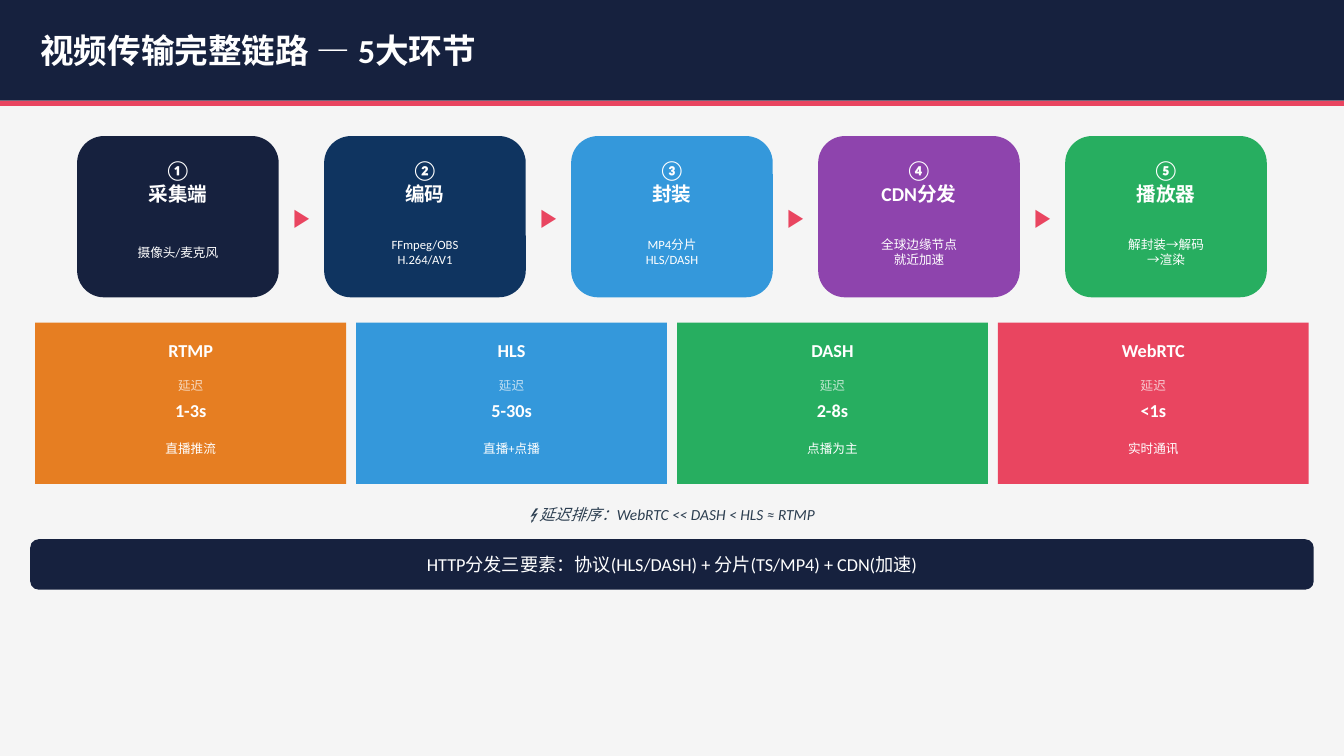
from pptx import Presentation
from pptx.dml.color import RGBColor
from pptx.enum.shapes import MSO_SHAPE
from pptx.enum.text import MSO_ANCHOR, PP_ALIGN
from pptx.oxml.ns import qn
from pptx.util import Inches, Pt
from lxml.etree import SubElement

NAVY = RGBColor(0x16, 0x21, 0x3E)
DEEP_BLUE = RGBColor(0x0F, 0x34, 0x60)
BLUE = RGBColor(0x34, 0x98, 0xDB)
PURPLE = RGBColor(0x8E, 0x44, 0xAD)
GREEN = RGBColor(0x27, 0xAE, 0x60)
ORANGE = RGBColor(0xE6, 0x7E, 0x22)
RED = RGBColor(0xE9, 0x45, 0x60)
SLATE = RGBColor(0x2C, 0x3E, 0x50)
PALE = RGBColor(0xF5, 0xF5, 0xF5)
WHITE = RGBColor(0xFF, 0xFF, 0xFF)

SLIDE_WIDTH = Inches(13.33)

STAGES = [
    ("①", "采集端", ["摄像头/麦克风"], NAVY),
    ("②", "编码", ["FFmpeg/OBS", "H.264/AV1"], DEEP_BLUE),
    ("③", "封装", ["MP4分片", "HLS/DASH"], BLUE),
    ("④", "CDN分发", ["全球边缘节点", "就近加速"], PURPLE),
    ("⑤", "播放器", ["解封装→解码", "→渲染"], GREEN),
]
PROTOCOLS = [
    ("RTMP", "1-3s", "直播推流", ORANGE),
    ("HLS", "5-30s", "直播+点播", BLUE),
    ("DASH", "2-8s", "点播为主", GREEN),
    ("WebRTC", "<1s", "实时通讯", RED),
]


def add_panel(slide, kind, left, top, width, height, color):
    panel = slide.shapes.add_shape(kind, left, top, width, height)
    panel.shadow.inherit = False
    panel.fill.solid()
    panel.fill.fore_color.rgb = color
    panel.line.fill.background()


def add_text(slide, lines, left, top, width, height, *, size, color=WHITE,
             bold=False, italic=False, align=PP_ALIGN.CENTER, inset=True,
             opacity=100):
    frame = slide.shapes.add_textbox(left, top, width, height).text_frame
    frame.word_wrap = True
    frame.vertical_anchor = MSO_ANCHOR.MIDDLE
    if not inset:
        frame.margin_left = frame.margin_right = 0
        frame.margin_top = frame.margin_bottom = 0
    for index, line in enumerate(lines):
        paragraph = frame.paragraphs[0] if index == 0 else frame.add_paragraph()
        paragraph.alignment = align
        run = paragraph.add_run()
        run.text = line
        run.font.name = "Calibri"
        run.font.size = Pt(size)
        run.font.bold = bold
        run.font.italic = italic
        run.font.color.rgb = color
        if opacity < 100:
            for tint in run.font.fill._xPr.iter(qn("a:srgbClr")):
                SubElement(tint, qn("a:alpha")).set("val", str(opacity * 1000))


def add_header(slide, left, top, width, height):
    margin = Inches(0.4)
    add_panel(slide, MSO_SHAPE.RECTANGLE, left, top, width, height, NAVY)
    add_panel(slide, MSO_SHAPE.RECTANGLE, left, top + height, width, Inches(0.05), RED)
    add_text(slide, ["视频传输完整链路 — 5大环节"], left + margin, top + Inches(0.15),
             width - 2 * margin, height - Inches(0.3), size=24, bold=True,
             align=PP_ALIGN.LEFT, inset=False)


def add_stage(slide, left, top, width, height, stage):
    number, title, details, color = stage
    half = Inches(0.7)
    add_panel(slide, MSO_SHAPE.ROUNDED_RECTANGLE, left, top, width, height, color)
    add_text(slide, [number, title], left, top + Inches(0.1), width, half,
             size=14, bold=True)
    add_text(slide, details, left, top + Inches(0.8), width, half, size=9)


def add_pipeline(slide, left, top, width, height):
    gap = Inches(0.45)
    card = (width - gap * (len(STAGES) - 1)) // len(STAGES)
    for index, stage in enumerate(STAGES):
        card_left = left + index * (card + gap)
        add_stage(slide, card_left, top, card, height, stage)
        if index < len(STAGES) - 1:
            add_text(slide, ["▶"], card_left + card, top + Inches(0.6), gap,
                     Inches(0.4), size=18, color=RED)


def add_protocol(slide, left, top, width, height, protocol):
    name, delay, usage, color = protocol
    add_panel(slide, MSO_SHAPE.RECTANGLE, left, top, width, height, color)
    rows = [
        (name, 0.05, 0.45, dict(size=13, bold=True)),
        ("延迟", 0.5, 0.25, dict(size=9, opacity=70)),
        (delay, 0.72, 0.3, dict(size=13, bold=True)),
        (usage, 1.05, 0.4, dict(size=9)),
    ]
    for text, offset, row_height, style in rows:
        add_text(slide, [text], left, top + Inches(offset), width,
                 Inches(row_height), **style)


def add_protocols(slide, left, top, width, height):
    gap = Inches(0.1)
    card = (width - gap * (len(PROTOCOLS) - 1)) // len(PROTOCOLS)
    for index, protocol in enumerate(PROTOCOLS):
        add_protocol(slide, left + index * (card + gap), top, card, height, protocol)


def add_summary(slide, left, top, width, height):
    pad_x, pad_y = Inches(0.05), Inches(0.03)
    bar_top, bar_height = top + Inches(0.4), height - Inches(0.4)
    add_text(slide, ["⚡ 延迟排序：WebRTC << DASH < HLS ≈ RTMP"], left, top, width,
             Inches(0.3), size=11, color=SLATE, italic=True)
    add_panel(slide, MSO_SHAPE.ROUNDED_RECTANGLE, left, bar_top, width, bar_height, NAVY)
    add_text(slide, ["HTTP分发三要素：协议(HLS/DASH) + 分片(TS/MP4) + CDN(加速)"],
             left + pad_x, bar_top + pad_y, width - 2 * pad_x,
             bar_height - 2 * pad_y, size=13)


def main():
    deck = Presentation()
    deck.slide_width = SLIDE_WIDTH
    deck.slide_height = Inches(7.5)
    slide = deck.slides.add_slide(deck.slide_layouts[6])
    slide.background.fill.solid()
    slide.background.fill.fore_color.rgb = PALE

    add_header(slide, 0, 0, SLIDE_WIDTH, Inches(1))
    pipeline_width = Inches(11.8)
    add_pipeline(slide, (SLIDE_WIDTH - pipeline_width) // 2, Inches(1.35),
                 pipeline_width, Inches(1.6))
    add_protocols(slide, Inches(0.35), Inches(3.2), Inches(12.63), Inches(1.6))
    add_summary(slide, Inches(0.3), Inches(4.95), Inches(12.73), Inches(0.9))
    deck.save("out.pptx")


if __name__ == "__main__":
    main()
